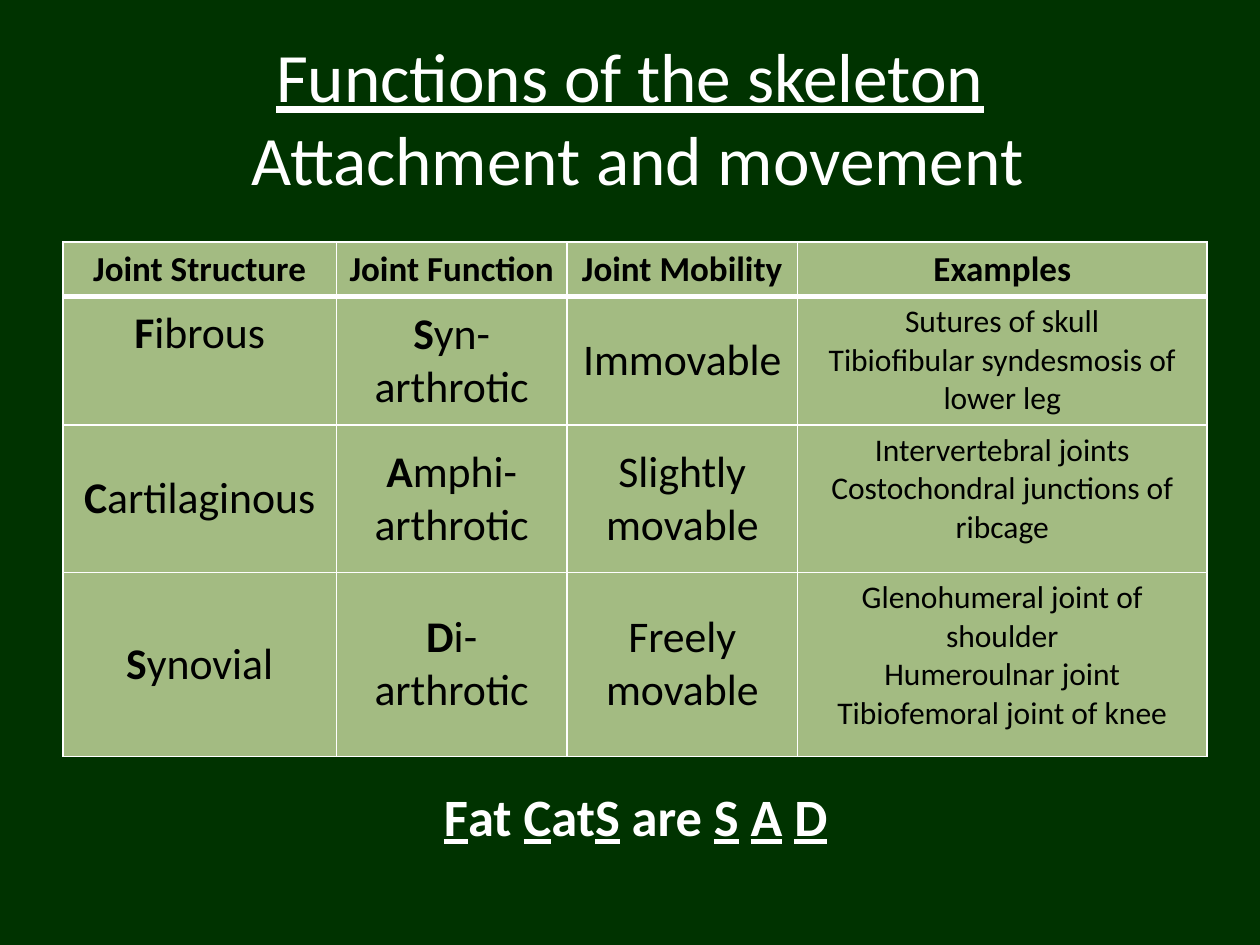
from lxml import etree
from pptx import Presentation
from pptx import util as u
from pptx.dml.color import RGBColor
from pptx.enum import text
from pptx.oxml.ns import qn

COLORS = {"bg": "003300", "light": "FFFFFF", "dark": "000000", "cell": "C3D69B"}
MIDDLE = text.MSO_ANCHOR.MIDDLE
TOP = text.MSO_ANCHOR.TOP

HEADERS = ["Joint Structure", "Joint Function", "Joint Mobility", "Examples"]
JOINTS = [
    ["_F_ibrous", "_S_yn-\narthrotic", "Immovable",
     "Sutures of skull\nTibiofibular syndesmosis of lower leg"],
    ["_C_artilaginous", "_A_mphi-\narthrotic", "Slightly movable",
     "Intervertebral joints\nCostochondral junctions of ribcage"],
    ["_S_ynovial", "_D_i-\narthrotic", "Freely movable",
     "Glenohumeral joint of shoulder\nHumeroulnar joint\nTibiofemoral joint of knee"],
]
COLUMNS = [2.17, 1.83, 1.83, 3.25]
ROWS = [0.42, 1.02, 1.17, 1.46]


def write(tf, content, size, color, bold=False, mark="bold"):
    """Fill a frame, one paragraph a line, with _marked_ pieces emphasised."""
    for i, line in enumerate(content.split("\n")):
        p = tf.paragraphs[0] if i == 0 else tf.add_paragraph()
        p.alignment = text.PP_ALIGN.CENTER
        for j, piece in enumerate(line.split("_")):
            if not piece:
                continue
            r = p.add_run()
            r.text = piece
            r.font.name = "Calibri"
            r.font.size = u.Pt(size)
            r.font.color.rgb = RGBColor.from_string(COLORS[color])
            r.font.bold = bold
            if j % 2:
                setattr(r.font, mark, True)


class SlideBuilder:
    """Holds the slide and its style, and adds each kind of element."""

    def __init__(self, s):
        self.s = s
        s.background.fill.solid()
        s.background.fill.fore_color.rgb = RGBColor.from_string(COLORS["bg"])

    def text_box(self, box, content, size, wrap=True, anchor=TOP, **style):
        sp = self.s.shapes.add_textbox(*map(u.Inches, box))
        tf = sp.text_frame
        tf.word_wrap = wrap
        tf.vertical_anchor = anchor
        write(tf, content, size, "light", **style)

    def style_cell(self, cell, widths):
        cell.fill.solid()
        cell.fill.fore_color.rgb = RGBColor.from_string(COLORS["cell"])
        tcPr = cell._tc.get_or_add_tcPr()
        color = tcPr.find(qn("a:solidFill"))[0]
        etree.SubElement(color, qn("a:alpha"), val="84000")
        for i, (side, width) in enumerate(widths.items()):
            ln = etree.Element(qn(f"a:ln{side}"), w=str(u.Pt(width)))
            fill = etree.SubElement(ln, qn("a:solidFill"))
            etree.SubElement(fill, qn("a:srgbClr"), val=COLORS["light"])
            tcPr.insert(i, ln)

    def table(self, left, top, columns, rows, data):
        box = map(u.Inches, (left, top, sum(columns), sum(rows)))
        table = self.s.shapes.add_table(len(rows), len(columns), *box).table
        for column, width in zip(table.columns, columns):
            column.width = u.Inches(width)
        for i, (height, values) in enumerate(zip(rows, data)):
            table.rows[i].height = u.Inches(height)
            for j, value in enumerate(values):
                cell = table.cell(i, j)
                header, examples = i == 0, j == len(columns) - 1
                size = 20 if header else 18 if examples else 25
                write(cell.text_frame, value, size, "dark", bold=header)
                cell.vertical_anchor = TOP if header or examples else MIDDLE
                self.style_cell(cell, {"L": 1, "R": 1, "T": 3 if i == 1 else 1,
                                       "B": 3 if header else 1})
        return table


def main():
    prs = Presentation()
    prs.slide_width, prs.slide_height = u.Inches(10), u.Inches(7.5)
    slide = SlideBuilder(prs.slides.add_slide(prs.slide_layouts[6]))
    slide.text_box((0.5, 0.3, 9, 1.25),
                   "_Functions of the skeleton_\n Attachment and movement",
                   39.6, anchor=MIDDLE, mark="underline")
    table = slide.table(0.5, 1.92, COLUMNS, ROWS, [HEADERS] + JOINTS)
    fibrous = table.cell(1, 0)
    fibrous.vertical_anchor = TOP
    fibrous.margin_top = u.Inches(0.08)
    slide.text_box((3.42, 6.17, 3.25, 0.61), "_F_at _C_at_S_ are _S_ _A_ _D_",
                   30, wrap=False, bold=True, mark="underline")
    prs.save("out.pptx")


if __name__ == "__main__":
    main()
